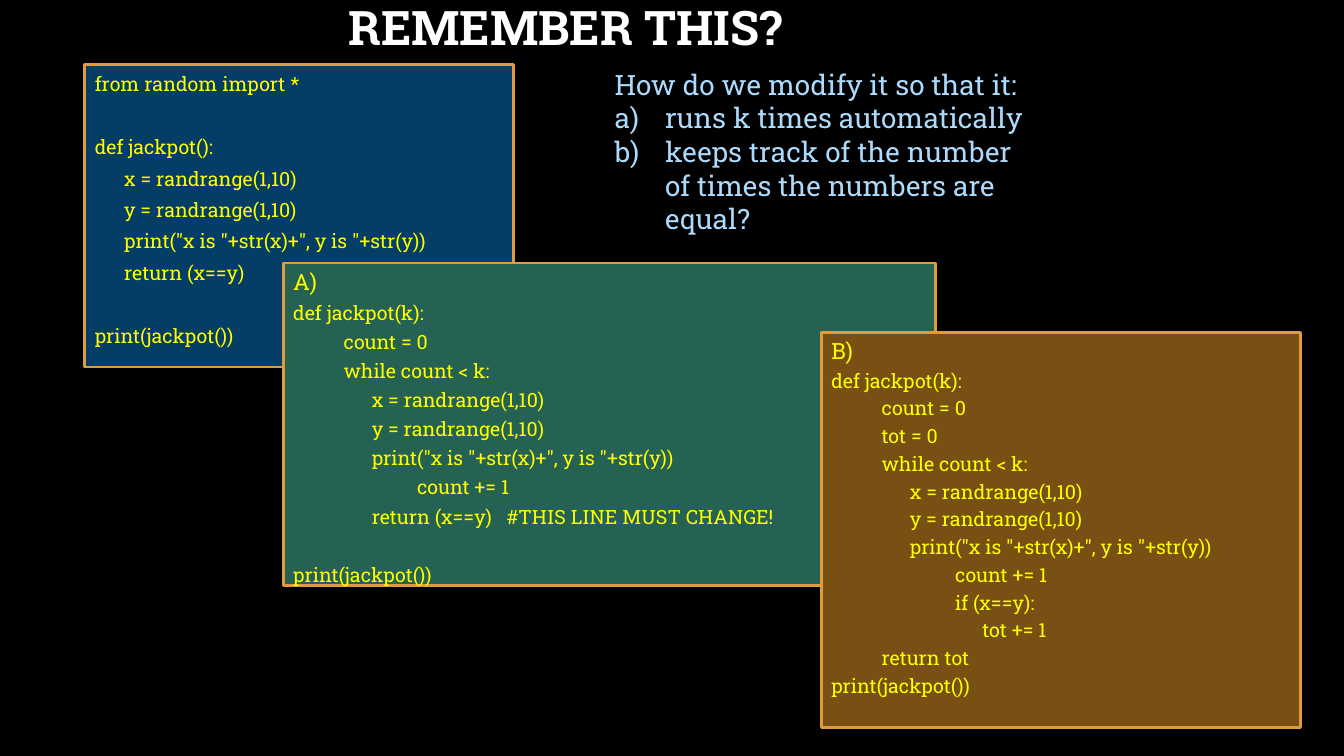
from dataclasses import dataclass

from lxml import etree
from pptx import Presentation
from pptx import util as u
from pptx.dml.color import RGBColor
from pptx.enum import shapes, text
from pptx.oxml import ns


@dataclass(frozen=True)
class Theme:
    font: str = "Roboto Slab"
    background: str = "000000"
    title: str = "FFFFFF"
    question: str = "ABDAFC"
    code: str = "FFFF00"
    border: str = "DE9C3C"
    starter: str = "043D66"
    answer_a: str = "256253"
    answer_b: str = "795014"
    title_size: int = 34
    question_size: int = 20
    label_size: int = 16
    code_size: int = 14


class SlideBuilder:
    """Holds the theme and the slide being built."""

    def __init__(self, slide, theme):
        self.slide, self.theme = slide, theme
        slide.background.fill.solid()
        slide.background.fill.fore_color.rgb = RGBColor.from_string(theme.background)

    def add_lines(self, frame, lines, color):
        """Add (words, size) lines and return their paragraphs."""
        frame.word_wrap = True
        paragraphs = []
        for words, size in lines:
            paragraph = frame.add_paragraph() if paragraphs else frame.paragraphs[0]
            paragraph.text = words
            paragraph.alignment = text.PP_ALIGN.LEFT
            paragraph.font.name = self.theme.font
            paragraph.font.size = u.Pt(size)
            paragraph.font.color.rgb = RGBColor.from_string(color)
            paragraphs.append(paragraph)
        return paragraphs

    def title(self, words, box):
        frame = self.slide.shapes.add_textbox(*map(u.Cm, box)).text_frame
        frame.vertical_anchor = text.MSO_ANCHOR.MIDDLE
        heading, = self.add_lines(frame, [(words, self.theme.title_size)], self.theme.title)
        heading.alignment = text.PP_ALIGN.CENTER
        heading.line_spacing = 0.9
        heading.font.bold = True

    def question(self, intro, tasks, box):
        frame = self.slide.shapes.add_textbox(*map(u.Cm, box)).text_frame
        lines = [(words, self.theme.question_size) for words in (intro, *tasks)]
        for task in self.add_lines(frame, lines, self.theme.question)[1:]:
            properties = task._p.get_or_add_pPr()
            properties.set("marL", str(u.Cm(1.27)))
            properties.set("indent", str(u.Cm(-1.27)))
            letter = etree.Element(ns.qn("a:buAutoNum"), type="alphaLcParenR")
            properties.insert_element_before(letter, "a:tabLst", "a:defRPr", "a:extLst")

    def code_panel(self, code, box, fill, label=None, spacing=1.0, gap=4):
        """Draw code given as (indent in cm, words); None is a skipped line."""
        panel = self.slide.shapes.add_shape(shapes.MSO_SHAPE.RECTANGLE, *map(u.Cm, box))
        panel.shadow.inherit = False
        panel.fill.solid()
        panel.fill.fore_color.rgb = RGBColor.from_string(fill)
        panel.line.color.rgb = RGBColor.from_string(self.theme.border)
        panel.line.width = u.Pt(2)
        panel.text_frame.vertical_anchor = text.MSO_ANCHOR.TOP

        # A skipped line becomes space above the next one
        line_height = 1.2 * self.theme.code_size * spacing + gap
        rows, above = [], gap
        if label:
            rows.append((0, label, self.theme.label_size, 4))
        for row in code:
            if row is None:
                above += line_height
            else:
                rows.append((*row, self.theme.code_size, above))
                above = gap

        lines = [(words, size) for _, words, size, _ in rows]
        paragraphs = self.add_lines(panel.text_frame, lines, self.theme.code)
        for paragraph, (indent, _, _, before) in zip(paragraphs, rows):
            paragraph.line_spacing = spacing
            paragraph.space_before = u.Pt(round(before, 1))
            paragraph._p.get_or_add_pPr().set("marL", str(u.Cm(indent)))


def main():
    deck = Presentation()
    deck.slide_width, deck.slide_height = u.Cm(33.87), u.Cm(19.05)
    theme = Theme()
    builder = SlideBuilder(deck.slides.add_slide(deck.slide_layouts[6]), theme)

    # Code shared by all three panels
    draw_and_show = ("x = randrange(1,10)", "y = randrange(1,10)",
                     'print("x is "+str(x)+", y is "+str(y))')
    call = (0, "print(jackpot())")
    starter_body, function_body, loop_body, counter, branch = 0.74, 1.27, 1.98, 3.12, 3.81

    # Title
    builder.title("REMEMBER THIS?", (4.45, -0.08, 19.6, 1.7))

    # Starting program
    starter = [(0, "from random import *"), None, (0, "def jackpot():"),
               *((starter_body, words) for words in draw_and_show),
               (starter_body, "return (x==y)"), None, call]
    builder.code_panel(starter, (2.14, 1.63, 10.8, 7.62), theme.starter, spacing=1.1)

    # Question
    builder.question("How do we modify it so that it:",
                     ["runs k times automatically",
                      "keeps track of the number of times the numbers are equal?"],
                     (15.24, 1.57, 11.23, 4.65))

    # Answer A: repeat k times
    loop = [(function_body, "while count < k:"),
            *((loop_body, words) for words in draw_and_show),
            (counter, "count += 1")]
    start = [(0, "def jackpot(k):"), (function_body, "count = 0")]
    answer_a = [*start, *loop,
                (loop_body, "return (x==y)   #THIS LINE MUST CHANGE!"), None, call]
    builder.code_panel(answer_a, (7.14, 6.63, 16.43, 8.13), theme.answer_a, label="A)")

    # Answer B: count the equal pairs
    answer_b = [*start, (function_body, "tot = 0"), *loop,
                (counter, "if (x==y):"), (branch, "tot += 1"),
                (function_body, "return tot"), call]
    builder.code_panel(answer_b, (20.7, 8.38, 12.07, 9.96), theme.answer_b,
                       label="B)", gap=3)

    deck.save("out.pptx")


if __name__ == "__main__":
    main()
